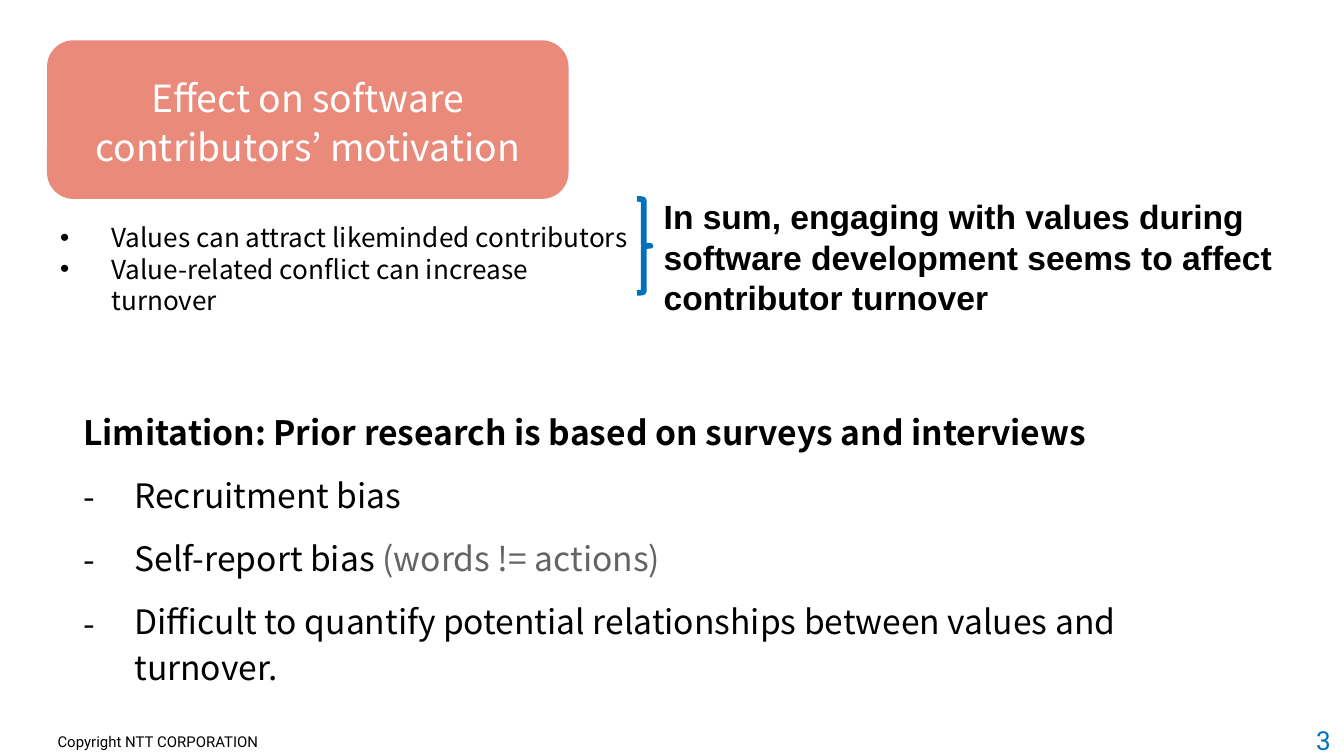
from lxml.etree import SubElement
from pptx import Presentation
from pptx.dml.color import RGBColor
from pptx.enum.shapes import MSO_SHAPE
from pptx.enum.text import MSO_ANCHOR, MSO_AUTO_SIZE, PP_ALIGN
from pptx.oxml.ns import qn
from pptx.util import Inches, Pt

COLORS = {"text": "000000", "muted": "646464", "blue": "0072BC",
          "brace": "0072BD", "heading": "EA8A7B", "white": "FFFFFF"}
SANS = "Noto Sans CJK JP"
BULLET_FONTS = {"•": "Arial", "-": SANS}
BODY_SPACING = {"line_spacing": 1.14, "space_before": Pt(8), "space_after": Pt(1.3)}
HEADING_SPACING = {"line_spacing": 1.1, "space_after": Pt(2), "alignment": PP_ALIGN.CENTER}

LIMITATIONS = [
    [("Recruitment bias", "text")],
    [("Self-report bias ", "text"), ("(words != actions)", "muted")],
    [("Difficult to quantify potential relationships between values and turnover.", "text")],
]
EFFECTS = ["Values can attract likeminded contributors",
           "Value-related conflict can increase turnover"]


def rgb(name):
    return RGBColor.from_string(COLORS[name])


def apply_format(target, values):
    for name, value in values.items():
        setattr(target, name, value)


def set_bullet(para, char=None):
    """Give the paragraph a hanging bullet, or none at all."""
    properties = para._p.get_or_add_pPr()
    hang = Inches(0.38) if char else 0
    properties.set("marL", str(hang))
    properties.set("indent", str(-hang))
    if char:
        SubElement(properties, qn("a:buFont")).set("typeface", BULLET_FONTS[char])
        SubElement(properties, qn("a:buChar")).set("char", char)
    else:
        SubElement(properties, qn("a:buNone"))


def fill_frame(frame, paragraphs, size, font=SANS, bold=False, spacing=None):
    """Write paragraphs given as (bullet, [(text, color), ...])."""
    for index, (bullet, spans) in enumerate(paragraphs):
        para = frame.paragraphs[0] if index == 0 else frame.add_paragraph()
        set_bullet(para, bullet)
        apply_format(para, spacing or {})
        if index == 0:
            para.space_before = Pt(0)
        for text, color in spans:
            span = para.add_run()
            span.text = text
            apply_format(span.font, {"size": Pt(size), "name": font,
                                     "bold": bold and not bullet})
            span.font.color.rgb = rgb(color)


def add_text(page, place, paragraphs, size, **style):
    box = page.shapes.add_textbox(*map(Inches, place))
    box.text_frame.word_wrap = True
    fill_frame(box.text_frame, paragraphs, size, **style)
    return box


def add_heading(page, place, text):
    box = page.shapes.add_shape(MSO_SHAPE.ROUNDED_RECTANGLE, *map(Inches, place))
    box.shadow.inherit = False
    box.fill.solid()
    box.fill.fore_color.rgb = rgb("heading")
    box.line.fill.background()
    frame = box.text_frame
    margins = ("margin_left", "margin_top", "margin_right", "margin_bottom")
    apply_format(frame, dict.fromkeys(margins, Inches(0.04)))
    apply_format(frame, {"word_wrap": True, "vertical_anchor": MSO_ANCHOR.MIDDLE})
    fill_frame(frame, [(None, [(text, "white")])], 20, spacing=HEADING_SPACING)


def add_brace(page, place):
    brace = page.shapes.add_shape(MSO_SHAPE.RIGHT_BRACE, *map(Inches, place))
    brace.shadow.inherit = False
    brace.fill.background()
    brace.line.color.rgb = rgb("brace")
    brace.line.width = Pt(3)


def fill_body(page, place):
    body = page.placeholders[1]
    apply_format(body, dict(zip(("left", "top", "width", "height"), map(Inches, place))))
    apply_format(body.text_frame, {"auto_size": MSO_AUTO_SIZE.NONE, "word_wrap": True,
                                   "vertical_anchor": MSO_ANCHOR.TOP})
    lead = "Limitation: Prior research is based on surveys and interviews"
    paragraphs = [(None, [(lead, "text")])] + [("-", spans) for spans in LIMITATIONS]
    fill_frame(body.text_frame, paragraphs, 18, bold=True, spacing=BODY_SPACING)


def add_footer(page):
    add_text(page, (0.33, 5.4, 2.44, 0.24),
             [(None, [("Copyright NTT CORPORATION", "text")])], 8, font="Roboto")
    number = add_text(page, (7.75, 5.4, 2.25, 0.22), [(None, [("3", "blue")])], 14,
                      font="Roboto", spacing={"alignment": PP_ALIGN.RIGHT})
    number.text_frame.vertical_anchor = MSO_ANCHOR.MIDDLE


def main():
    deck = Presentation()
    deck.slide_width = Inches(10)
    deck.slide_height = deck.slide_width * 9 // 16
    page = deck.slides.add_slide(deck.slide_layouts[1])
    title = page.shapes.title._element
    title.getparent().remove(title)

    add_footer(page)
    fill_body(page, (0.52, 2.97, 8.96, 1.87))
    add_heading(page, (0.35, 0.3, 3.88, 1.18), "Effect on software contributors’ motivation")
    add_text(page, (0.35, 1.6, 4.5, 1.04),
             [("•", [(text, "text")]) for text in EFFECTS], 14)
    add_brace(page, (4.74, 1.48, 0.1, 0.7))
    summary = ("In sum, engaging with values during software development "
               "seems to affect contributor turnover")
    add_text(page, (4.84, 1.41, 5, 1.01), [(None, [(summary, "text")])], 18,
             font="Arial", bold=True)
    deck.save("out.pptx")


if __name__ == "__main__":
    main()
